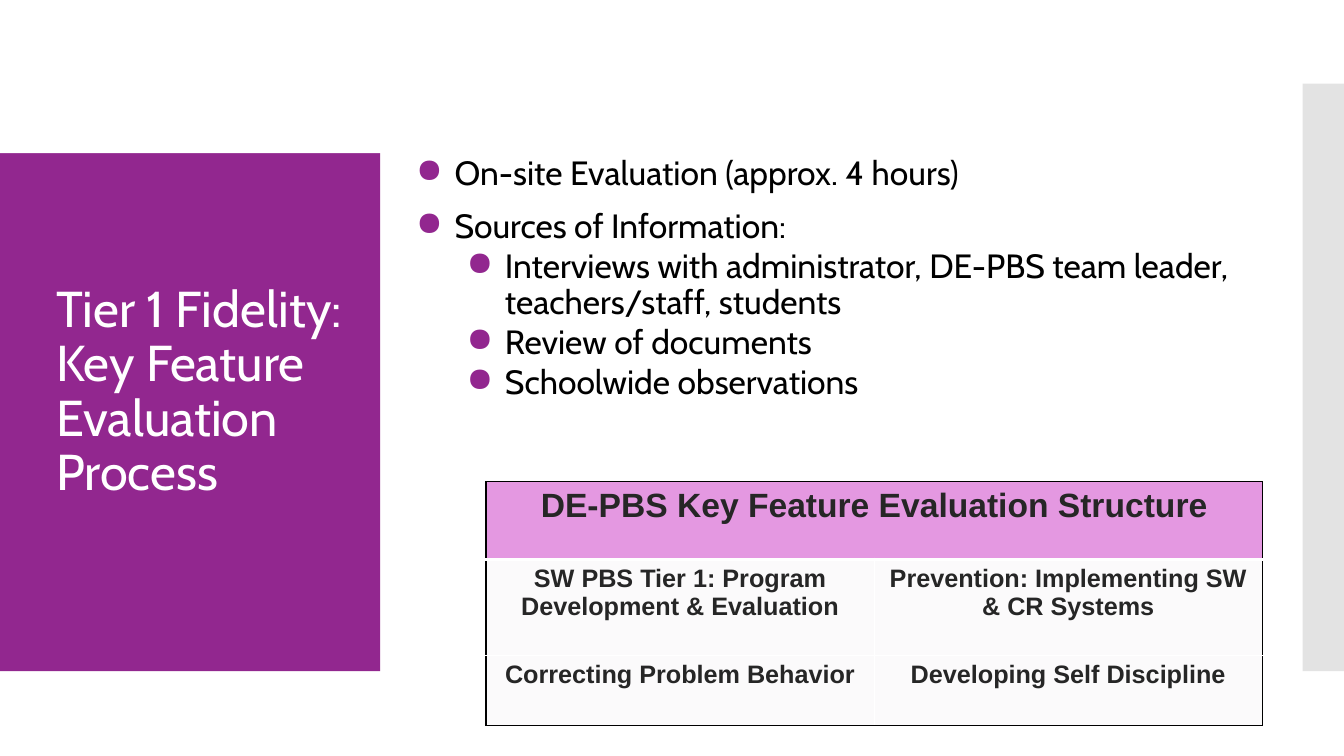
from dataclasses import dataclass

from lxml import etree
from pptx import Presentation
from pptx.dml.color import RGBColor
from pptx.enum.shapes import MSO_SHAPE
from pptx.enum.text import MSO_ANCHOR, PP_ALIGN
from pptx.oxml.ns import qn
from pptx.util import Inches, Pt

RECT = MSO_SHAPE.RECTANGLE
TOP, MIDDLE = MSO_ANCHOR.TOP, MSO_ANCHOR.MIDDLE
CENTER = PP_ALIGN.CENTER


@dataclass(frozen=True)
class Theme:
    purple: str = "92278F"
    grey: str = "C8C8C8"
    white: str = "FFFFFF"
    black: str = "000000"
    ink: str = "262626"
    header: str = "E498E1"
    cell: str = "FBFAFB"
    font: str = "Cabin"
    table_font: str = "Arial"
    title_size: int = 36
    body_size: int = 24
    cell_size: int = 18


THEME = Theme()
TITLE = "Tier 1 Fidelity: Key Feature Evaluation Process"
BULLETS = [
    (0, "On-site Evaluation (approx. 4 hours)"),
    (0, "Sources of Information:"),
    (1, "Interviews with administrator, DE-PBS team leader, teachers/staff, students"),
    (1, "Review of documents"),
    (1, "Schoolwide observations"),
]
TABLE_ROWS = [
    ["DE-PBS Key Feature Evaluation Structure", ""],
    ["SW PBS Tier 1: Program Development & Evaluation",
     "Prevention: Implementing SW & CR Systems"],
    ["Correcting Problem Behavior", "Developing Self Discipline"],
]
ROW_HEIGHTS = [0.77, 0.95, 0.7]
COLUMN_WIDTH = 3.85


def add_panel(slide, left, top, width, height, color, opacity=100):
    sp = slide.shapes.add_shape(
        RECT, Inches(left), Inches(top), Inches(width), Inches(height))
    sp.shadow.inherit = False
    sp.line.fill.background()
    sp.fill.solid()
    sp.fill.fore_color.rgb = RGBColor.from_string(color)
    if opacity < 100:
        clr = sp.fill._xPr.find(".//" + qn("a:srgbClr"))
        etree.SubElement(clr, qn("a:alpha"), val=str(opacity * 1000))


def add_text_frame(slide, left, top, width, height):
    box = slide.shapes.add_textbox(
        Inches(left), Inches(top), Inches(width), Inches(height))
    tf = box.text_frame
    tf.word_wrap = True
    tf.vertical_anchor = MIDDLE
    return tf


def write(p, text, size, color, font=THEME.font, bold=False):
    p.text = text
    for r in p.runs:
        r.font.size = Pt(size)
        r.font.name = font
        r.font.bold = bold
        r.font.color.rgb = RGBColor.from_string(color)


def set_bullet(p, level):
    p.level = level
    pPr = p._p.get_or_add_pPr()
    pPr.set("marL", str(Inches(0.5 * (level + 1))))
    pPr.set("indent", str(Inches(-0.38)))
    clr = etree.SubElement(pPr, qn("a:buClr"))
    etree.SubElement(clr, qn("a:srgbClr"), val=THEME.purple)
    etree.SubElement(pPr, qn("a:buChar"), char="●")


def add_bullets(slide):
    tf = add_text_frame(slide, 3.91, 0.27, 8.76, 5)
    for i, (level, text) in enumerate(BULLETS):
        p = tf.paragraphs[0] if i == 0 else tf.add_paragraph()
        write(p, text, THEME.body_size, THEME.black)
        p.line_spacing = 0.9
        p.space_before = Pt(2.5 if level else 12)
        set_bullet(p, level)


def set_borders(cell, borders):
    """Borders maps the side letters L, R, T, B, in that order, to (colour, points)."""
    tcPr = cell._tc.get_or_add_tcPr()
    for i, (side, (color, width)) in enumerate(borders.items()):
        ln = etree.Element(qn("a:ln" + side), w=str(Pt(width)))
        fill = etree.SubElement(ln, qn("a:solidFill"))
        etree.SubElement(fill, qn("a:srgbClr"), val=color)
        tcPr.insert(i, ln)


def add_structure_table(slide):
    n_rows, n_cols = len(TABLE_ROWS), len(TABLE_ROWS[0])
    frame = slide.shapes.add_table(
        n_rows, n_cols, Inches(4.82), Inches(4.78),
        Inches(COLUMN_WIDTH * n_cols), Inches(sum(ROW_HEIGHTS)))
    table = frame.table
    for column in table.columns:
        column.width = Inches(COLUMN_WIDTH)
    for row, height in zip(table.rows, ROW_HEIGHTS):
        row.height = Inches(height)
    table.cell(0, 0).merge(table.cell(0, n_cols - 1))

    outer, inner, thick = (THEME.black, 1), (THEME.white, 1), (THEME.white, 3)
    for i, texts in enumerate(TABLE_ROWS):
        is_header = i == 0
        for j, text in enumerate(texts):
            cell = table.cell(i, j)
            cell.fill.solid()
            cell.fill.fore_color.rgb = RGBColor.from_string(
                THEME.header if is_header else THEME.cell)
            cell.margin_left = cell.margin_right = Inches(0.13)
            cell.vertical_anchor = TOP
            set_borders(cell, {
                "L": outer if is_header or j == 0 else inner,
                "R": outer if is_header or j == n_cols - 1 else inner,
                "T": outer if is_header else thick if i == 1 else inner,
                "B": thick if is_header else outer if i == n_rows - 1 else inner,
            })
            if text:
                p = cell.text_frame.paragraphs[0]
                p.alignment = CENTER
                write(p, text, THEME.body_size if is_header else THEME.cell_size,
                      THEME.ink, THEME.table_font, bold=True)


def add_title(slide):
    p = add_text_frame(slide, 0.46, 1.38, 3.22, 5.03).paragraphs[0]
    write(p, TITLE, THEME.title_size, THEME.white)
    p.line_spacing = 0.9


def main():
    prs = Presentation()
    prs.slide_width, prs.slide_height = Inches(13.33), Inches(7.5)
    slide = prs.slides.add_slide(prs.slide_layouts[6])
    add_panel(slide, 0, 0.83, 3.77, 5.83, THEME.purple)
    add_panel(slide, 12.92, 0.83, 0.41, 5.83, THEME.grey, opacity=50)
    add_panel(slide, 0, 0.27, 12.67, 1.25, THEME.white)
    add_bullets(slide)
    add_structure_table(slide)
    add_title(slide)
    prs.save("out.pptx")


if __name__ == "__main__":
    main()
